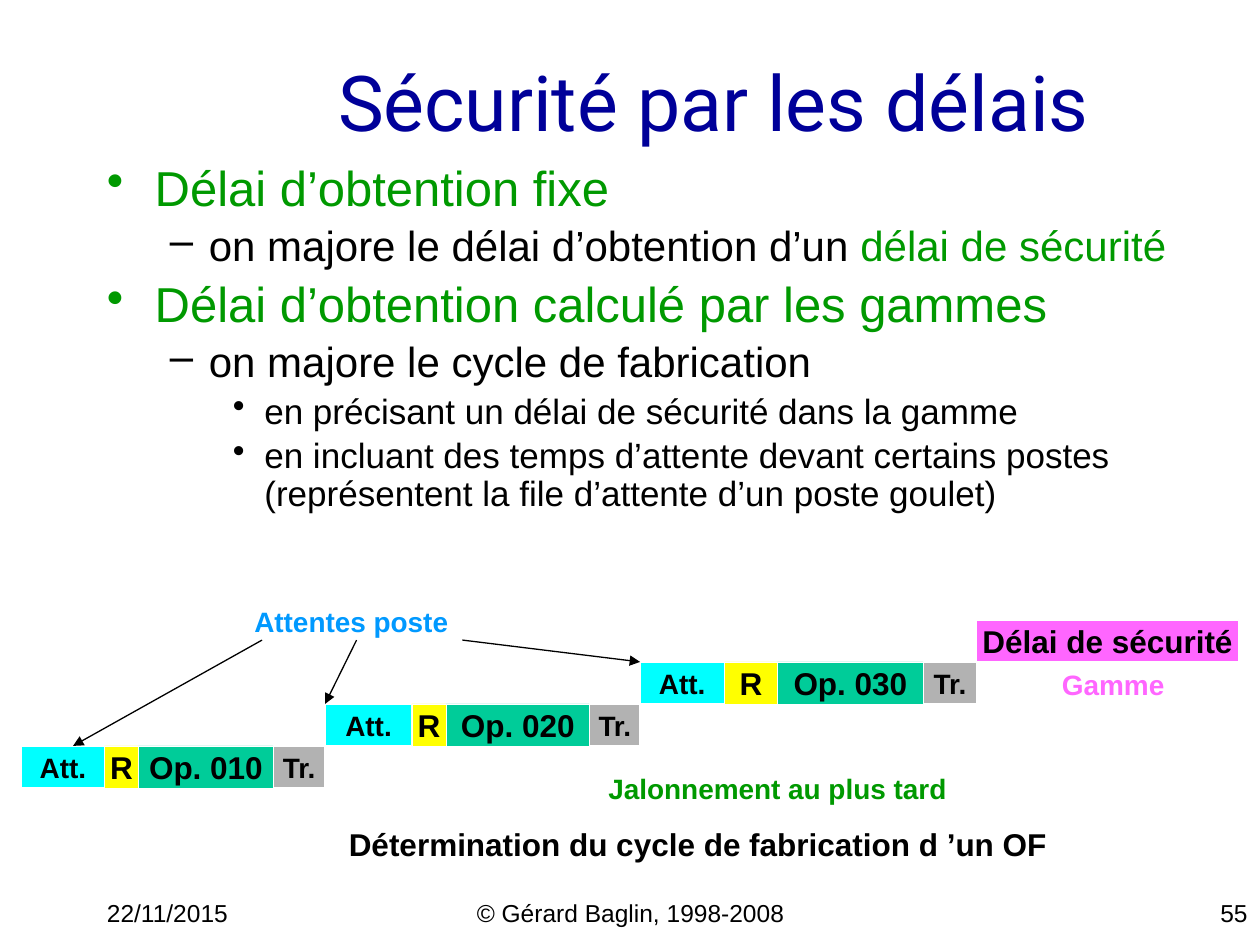
from itertools import pairwise

from lxml.etree import SubElement
from pptx import Presentation
from pptx.dml.color import RGBColor
from pptx.enum.shapes import MSO_CONNECTOR, MSO_SHAPE
from pptx.enum.text import MSO_ANCHOR, MSO_AUTO_SIZE, PP_ALIGN
from pptx.oxml.ns import qn
from pptx.util import Inches, Pt

BLACK, WHITE, GREEN, NAVY = "000000", "FFFFFF", "009900", "000099"
BLUE, PINK, YELLOW = "0099FF", "FF66FF", "FFFF00"
CYAN, TEAL, GREY = "00FFFF", "00CC99", "B2B2B2"
LEFT, CENTER, RIGHT = PP_ALIGN.LEFT, PP_ALIGN.CENTER, PP_ALIGN.RIGHT

TITLE = "Sécurité par les délais"
FOOTER = [
    ("22/11/2015", 0.75, 2.08, LEFT),
    ("© Gérard Baglin, 1998-2008", 3.42, 3.17, CENTER),
    ("55", 7.92, 2.08, RIGHT),
]
OUTLINE = [
    (0, [("Délai d’obtention fixe", GREEN)]),
    (1, [("on majore le délai d’obtention d’un ", BLACK), ("délai de sécurité", GREEN)]),
    (0, [("Délai d’obtention calculé par les gammes", GREEN)]),
    (1, [("on majore le cycle de fabrication", BLACK)]),
    (2, [("en précisant un délai de sécurité dans la gamme", BLACK)]),
    (2, [("en incluant des temps d’attente devant certains postes\v"
          "(représentent la file d’attente d’un poste goulet)", BLACK)]),
]
LEVELS = [("•", 28, 0.38, 0.38), ("–", 24, 0.81, 0.31), ("•", 20, 1.25, 0.25)]

OPERATIONS = [
    ("Op. 010", (0.17, 0.83, 1.1, 2.17, 2.58)),
    ("Op. 020", (2.58, 3.27, 3.54, 4.68, 5.08)),
    ("Op. 030", (5.08, 5.75, 6.17, 7.33, 7.75)),
]
SAFETY = ("Délai de sécurité", 7.75, 9.83)
STEP_HEIGHT = 1 / 3
FIRST_STEP_TOP = 5.92

LABELS = [
    ("Attentes poste", 1.92, 4.75, 1.74, 16, BLUE),
    ("Gamme", 8.33, 5.25, 1.02, 16, PINK),
    ("Jalonnement au plus tard", 4.73, 6.07, 2.89, 16, GREEN),
    ("Détermination du cycle de fabrication d\u00a0’un OF", 2.67, 6.5, 5.74, 18, BLACK),
]
ARROW_TOP = 5.08
ARROWS = [(2.08, 0.58, 0), (2.83, 2.58, 1), (3.67, 5.08, 2)]


def color(hex_string):
    return RGBColor.from_string(hex_string)


def style(run, size, ink, bold=False, face="Arial"):
    run.font.name = face
    run.font.size = Pt(size)
    run.font.bold = bold
    run.font.color.rgb = color(ink)


def write(shape, text, size, ink, align=LEFT, bold=False, face="Arial",
          wrap=True, anchor=MSO_ANCHOR.TOP):
    frame = shape.text_frame
    frame.text = text
    frame.word_wrap = wrap
    frame.vertical_anchor = anchor
    frame.paragraphs[0].alignment = align
    style(frame.paragraphs[0].runs[0], size, ink, bold, face)


def text_box(slide, left, top, width, height):
    return slide.shapes.add_textbox(*map(Inches, (left, top, width, height)))


def add_outline(slide):
    frame = text_box(slide, 0.75, 1.25, 8.83, 3.17).text_frame
    frame.word_wrap = True
    for index, (level, pieces) in enumerate(OUTLINE):
        bullet, size, indent, hanging = LEVELS[level]
        paragraph = frame.add_paragraph() if index else frame.paragraphs[0]
        paragraph.text = pieces[0][0]
        for text, _ in pieces[1:]:
            paragraph.add_run().text = text
        inks = [ink for _, ink in pieces]
        for number, run in enumerate(paragraph.runs):
            style(run, size, inks[min(number, len(inks) - 1)])
        paragraph.level = level
        paragraph.line_spacing = 0.9
        paragraph.space_before = Pt(size * 0.2)
        properties = paragraph._p.get_or_add_pPr()
        properties.set("marL", str(Inches(indent)))
        properties.set("indent", str(-Inches(hanging)))
        SubElement(properties, qn("a:buChar")).set("char", bullet)


def add_block(slide, text, left, right, step, fill, size, border):
    top = FIRST_STEP_TOP - step * STEP_HEIGHT
    block = slide.shapes.add_shape(
        MSO_SHAPE.RECTANGLE, *map(Inches, (left, top, right - left, STEP_HEIGHT)))
    block.shadow.inherit = False
    block.fill.solid()
    block.fill.fore_color.rgb = color(fill)
    block.line.color.rgb = color(WHITE)
    block.line.width = Pt(border)
    write(block, text, size, BLACK, CENTER, True, wrap=False, anchor=MSO_ANCHOR.MIDDLE)


def add_arrow(slide, start, end, step):
    tip = FIRST_STEP_TOP - step * STEP_HEIGHT
    arrow = slide.shapes.add_connector(
        MSO_CONNECTOR.STRAIGHT, *map(Inches, (start, ARROW_TOP, end, tip)))
    arrow.line.color.rgb = color(BLACK)
    arrow.line.width = Pt(0.75)
    SubElement(arrow.line._get_or_add_ln(), qn("a:tailEnd")).set("type", "triangle")
    SubElement(arrow._element.spPr, qn("a:effectLst"))


def main():
    deck = Presentation()
    deck.slide_width, deck.slide_height = Inches(10), Inches(7.5)
    slide = deck.slides.add_slide(deck.slide_layouts[6])

    for text, left, width, align in FOOTER:
        write(text_box(slide, left, 7.08, width, 0.25), text, 14, BLACK, align)
    write(text_box(slide, 0.25, 0.17, 8.5, 1.25), TITLE, 44, NAVY, RIGHT,
          face="Roboto", anchor=MSO_ANCHOR.MIDDLE)
    add_outline(slide)

    for step, (operation, edges) in enumerate(OPERATIONS):
        phases = [("Att.", CYAN, 16, 0.75), ("R", YELLOW, 18, 0.25),
                  (operation, TEAL, 18, 0.25), ("Tr.", GREY, 16, 0.75)]
        for (text, fill, size, border), (left, right) in zip(phases, pairwise(edges)):
            add_block(slide, text, left, right, step, fill, size, border)
    add_block(slide, *SAFETY, len(OPERATIONS), PINK, 18, 0.75)

    for text, left, top, width, size, ink in LABELS:
        label = text_box(slide, left, top, width, 0.1 + size / 60)
        write(label, text, size, ink, bold=True, wrap=False)
        label.text_frame.auto_size = MSO_AUTO_SIZE.SHAPE_TO_FIT_TEXT
    for arrow in ARROWS:
        add_arrow(slide, *arrow)

    deck.save("out.pptx")


if __name__ == "__main__":
    main()
